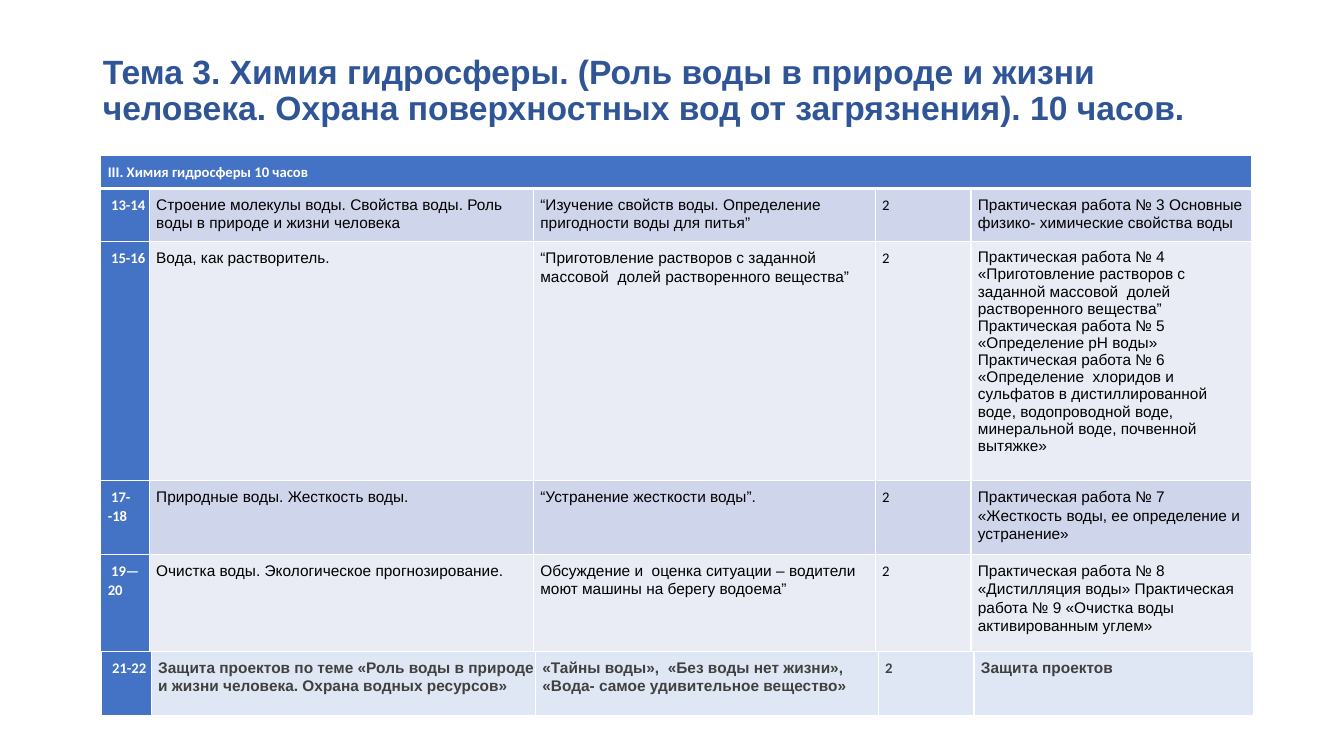
from dataclasses import dataclass

from lxml import etree
from pptx import Presentation
from pptx import util as u
from pptx.dml.color import RGBColor
from pptx.enum import text
from pptx.oxml.ns import qn


@dataclass(frozen=True)
class Theme:
    title: str = "2F5597"
    accent: str = "4472C4"
    band_dark: str = "CFD5EA"
    band_light: str = "E9EBF5"
    defence: str = "DFE7F5"
    white: str = "FFFFFF"
    black: str = "000000"
    grey: str = "404040"
    sans: str = "Arial"
    label: str = "Calibri"
    title_size: float = 24
    body_size: float = 11
    label_size: float = 10.5
    thin: float = 1
    thick: float = 3


class Board:
    unit = u.Inches(0.1)
    inset = 0.7
    first_line = 0.33

    def __init__(self, deck, theme):
        self.theme = theme
        self.page = deck.slides.add_slide(deck.slide_layouts[5])

    def grid(self, *counts):
        return [round(count * self.unit) for count in counts]

    def apply(self, target, values):
        for name, value in values.items():
            setattr(target, name, value)

    def add_words(self, para, words, size, color, font, bold):
        span = para.add_run()
        span.text = words
        self.apply(span.font, {"size": u.Pt(size), "name": font, "bold": bold})
        span.font.color.rgb = RGBColor.from_string(color)

    def title(self, words, left, top, width, height):
        box = self.page.shapes.title
        sides = self.grid(left, top, width, height)
        self.apply(box, dict(zip(("left", "top", "width", "height"), sides)))
        frame = box.text_frame
        self.apply(frame, {
            "word_wrap": True,
            "auto_size": text.MSO_AUTO_SIZE.NONE,
            "vertical_anchor": text.MSO_ANCHOR.MIDDLE,
        })
        para = frame.paragraphs[0]
        self.apply(para, {"alignment": text.PP_ALIGN.LEFT, "line_spacing": 0.9})
        theme = self.theme
        self.add_words(para, words, theme.title_size, theme.title, theme.sans, True)

    def table(self, left, top, columns, rows):
        sides = self.grid(left, top, sum(columns), sum(rows))
        table = self.page.shapes.add_table(len(rows), len(columns), *sides).table
        self.apply(table, {"first_row": False, "horz_banding": False})
        for column, width in zip(table.columns, self.grid(*columns)):
            column.width = width
        for row, height in zip(table.rows, self.grid(*rows)):
            row.height = height
        return table

    def borders(self, cell, bottom):
        edge = cell._tc.get_or_add_tcPr()
        widths = {side: self.theme.thin for side in ("lnL", "lnR", "lnT")}
        widths["lnB"] = bottom
        for place, (side, width) in enumerate(widths.items()):
            line = etree.Element(qn(f"a:{side}"), w=str(u.Pt(width)))
            fill = etree.SubElement(line, qn("a:solidFill"))
            etree.SubElement(fill, qn("a:srgbClr"), val=self.theme.white)
            edge.insert(place, line)

    def cell(self, cell, lines, fill, style, right=0, bottom=None, indent=0):
        cell.fill.solid()
        cell.fill.fore_color.rgb = RGBColor.from_string(fill)
        inset, right = self.grid(self.inset, right)
        self.apply(cell, {
            "margin_left": inset, "margin_top": inset,
            "margin_right": right, "margin_bottom": inset,
        })
        frame = cell.text_frame
        spacing = {"line_spacing": 1.07, "space_after": u.Pt(7.5)}
        for number, words in enumerate(lines):
            para = frame.add_paragraph() if number else frame.paragraphs[0]
            if len(lines) == 1:
                self.apply(para, spacing)
            if indent:
                layout = para._p.get_or_add_pPr()
                layout.set("marL", "0")
                layout.set("indent", str(self.grid(indent)[0]))
            self.add_words(para, words, *style)
        self.borders(cell, bottom or self.theme.thin)

    def header(self, table, words):
        theme = self.theme
        last = len(table.columns) - 1
        table.cell(0, 0).merge(table.cell(0, last))
        style = (theme.label_size, theme.white, theme.label, True)
        self.cell(table.cell(0, 0), [words], theme.accent, style,
                  self.inset, theme.thick)

    def lesson(self, table, row, entries, fill, color, bold=False, bottom=None):
        theme = self.theme
        number = (theme.label_size, theme.white, theme.label, True)
        body = (theme.body_size, color, theme.sans, bold)
        hours = (theme.label_size, color, theme.label, bold)
        styles = (number, body, body, hours, body)
        for column, (words, style) in enumerate(zip(entries, styles)):
            lines = [words] if isinstance(words, str) else words
            first, last = column == 0, column == len(styles) - 1
            self.cell(table.cell(row, column), lines,
                      theme.accent if first else fill, style,
                      self.inset if last else 0, bottom,
                      self.first_line if first else 0)


LESSONS = [
    ("13-14",
     "Строение молекулы воды. Свойства воды. Роль воды в природе и жизни человека",
     "“Изучение свойств воды. Определение пригодности воды для питья”",
     "2",
     "Практическая работа № 3 Основные физико- химические свойства воды"),
    ("15-16",
     "Вода, как растворитель.",
     "“Приготовление растворов с заданной массовой  долей растворенного вещества”",
     "2",
     ["Практическая работа № 4 «Приготовление растворов с заданной массовой  "
      "долей растворенного вещества” Практическая работа № 5 «Определение рН воды»",
      "Практическая работа № 6 «Определение  хлоридов и сульфатов в "
      "дистиллированной воде, водопроводной воде,  минеральной воде, "
      "почвенной вытяжке»"]),
    ("17--18",
     "Природные воды. Жесткость воды.",
     "“Устранение жесткости воды”.",
     "2",
     "Практическая работа № 7 «Жесткость воды, ее определение и устранение»"),
    ("19—20",
     "Очистка воды. Экологическое прогнозирование.",
     "Обсуждение и  оценка ситуации – водители моют машины на берегу водоема”",
     "2",
     "Практическая работа № 8 «Дистилляция воды» Практическая работа № 9 "
     "«Очистка воды активированным углем»"),
]

DEFENCE = (
    "21-22",
    "Защита проектов по теме «Роль воды в природе и жизни человека. "
    "Охрана водных ресурсов»",
    "«Тайны воды»,  «Без воды нет жизни», «Вода- самое удивительное вещество»",
    "2",
    "Защита проектов",
)


def main():
    deck = Presentation()
    deck.slide_width, deck.slide_height = u.Inches(13.33), u.Inches(7.5)
    theme = Theme()
    board = Board(deck, theme)
    board.title("Тема 3. Химия гидросферы. (Роль воды в природе и жизни человека. "
                "Охрана поверхностных вод от загрязнения). 10 часов.",
                9.2, 4, 115, 10.2)

    plan = board.table(10, 15.4, (4.8, 38.1, 33.9, 9.5, 27.8),
                       (3.2, 5.3, 23.7, 7.3, 12.4))
    board.header(plan, "III. Химия гидросферы 10 часов")
    bands = (theme.band_dark, theme.band_light)
    for row, entries in enumerate(LESSONS, start=1):
        board.lesson(plan, row, entries, bands[(row - 1) % 2], theme.black)

    final = board.table(10.1, 64.6, (4.9, 38.1, 34, 9.5, 27.7), (6.5,))
    board.lesson(final, 0, DEFENCE, theme.defence, theme.grey, True, theme.thick)
    deck.save("out.pptx")


if __name__ == "__main__":
    main()
